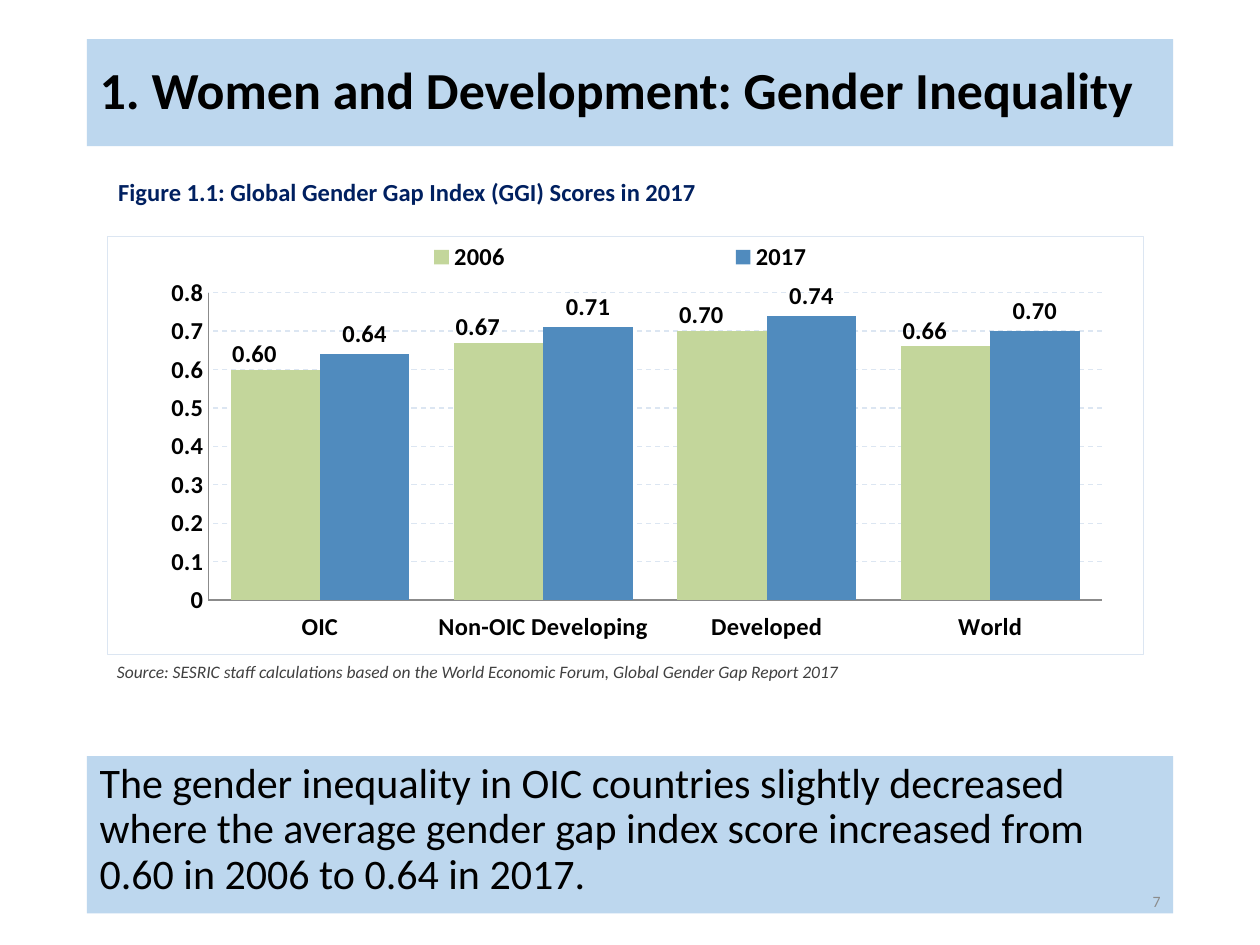
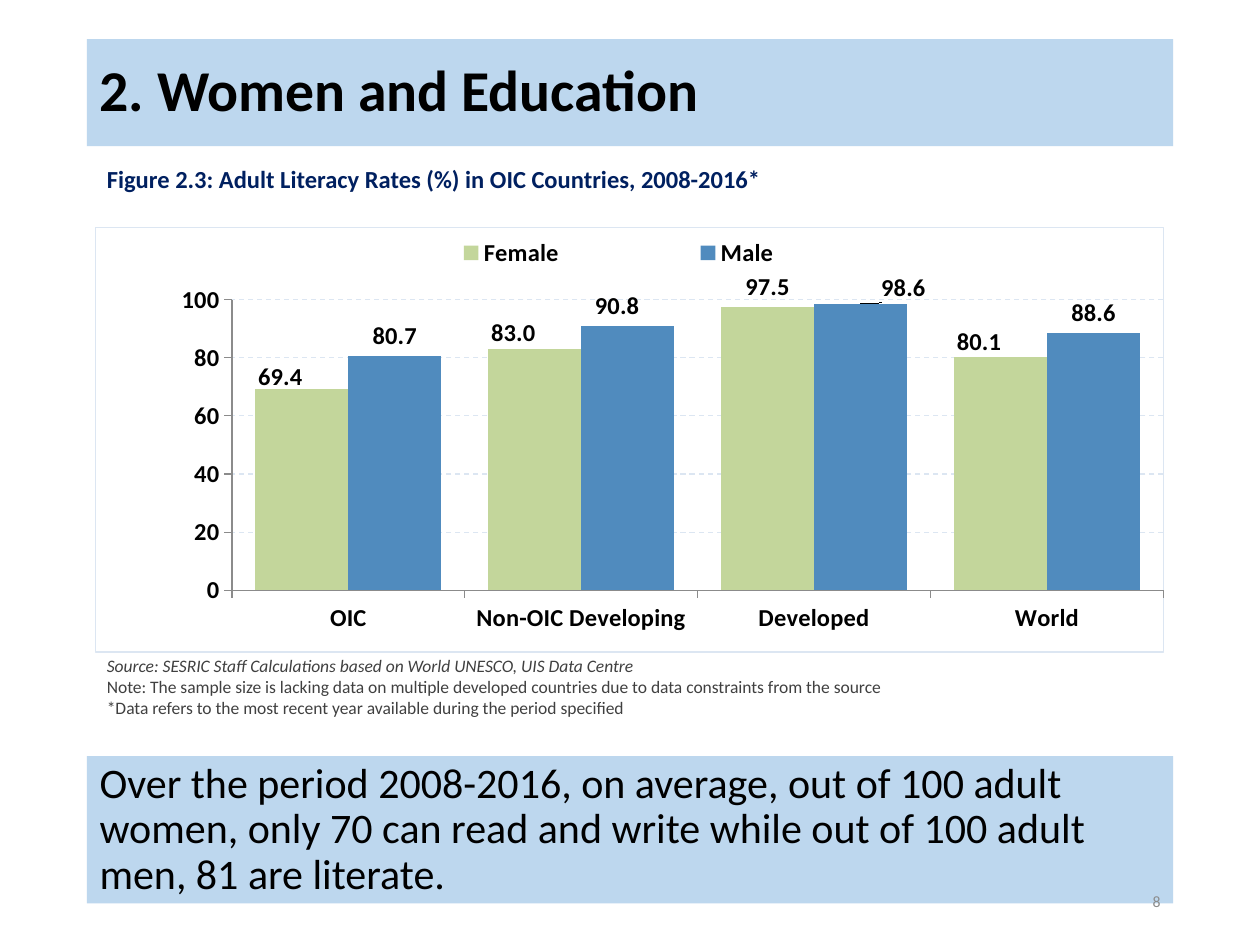
from dataclasses import dataclass

from lxml import etree
from pptx import Presentation
from pptx import util as u
from pptx.chart import data as chart_data
from pptx.dml import color
from pptx.enum import chart as ch
from pptx.enum import dml, text
from pptx.oxml import ns


@dataclass(frozen=True)
class Theme:
    font: str = "Calibri"
    band: str = "BDD7EE"
    ink: str = "000000"
    caption: str = "002060"
    source: str = "404040"
    number: str = "8C8C8C"
    axis: str = "8B8B8B"
    grid: str = "DCE6F2"
    bars: tuple = ("C3D69B", "508BBE")
    body_size: float = 24
    caption_size: float = 14
    chart_size: float = 14
    source_size: float = 10
    number_size: float = 9


REGIONS = ("OIC", "Non-OIC Developing", "Developed", "World")


def rgb(value):
    return color.RGBColor.from_string(value)


def place_by_hand(parent, index, **settings):
    for old in parent.findall(ns.qn("c:layout")):
        parent.remove(old)
    layout = etree.Element(ns.qn("c:layout"))
    manual = etree.SubElement(layout, ns.qn("c:manualLayout"))
    for tag, value in settings.items():
        etree.SubElement(manual, ns.qn(f"c:{tag}")).set("val", str(value))
    parent.insert(index, layout)


def place_box(parent, index, box, **target):
    x, y, w, h = box
    place_by_hand(parent, index, **target, xMode="edge", yMode="edge", x=x, y=y, w=w, h=h)


class Deck:
    def __init__(self, theme):
        self.theme = theme
        self.prs = Presentation()
        self.prs.slide_width = u.Inches(10)
        self.prs.slide_height = u.Inches(7.5)
        self.slide = None

    def add_slide(self):
        self.slide = self.prs.slides.add_slide(self.prs.slide_layouts[1])

    def style(self, paragraph, size, tint, bold=False, italic=False):
        for run in paragraph.runs:
            font = run.font
            font.name, font.size = self.theme.font, u.Pt(size)
            font.bold, font.italic = bold, italic
            font.color.rgb = rgb(tint)

    def band(self, holder, words, top, height, size, anchor, bold=False):
        holder.left, holder.top = u.Inches(0.69), u.Inches(top)
        holder.width, holder.height = u.Inches(8.62), u.Inches(height)
        holder.fill.solid()
        holder.fill.fore_color.rgb = rgb(self.theme.band)
        frame = holder.text_frame
        frame.text = words
        frame.word_wrap = True
        frame.auto_size = text.MSO_AUTO_SIZE.NONE
        frame.vertical_anchor = anchor
        line = frame.paragraphs[0]
        line.alignment = text.PP_ALIGN.LEFT
        line.line_spacing = 0.9
        self.style(line, size, self.theme.ink, bold)
        return line

    def title(self, words, size):
        self.band(self.slide.shapes.title, words, 0.31, 0.85, size,
                  text.MSO_ANCHOR.MIDDLE, bold=True)

    def finding(self, words, height):
        line = self.band(self.slide.placeholders[1], words, 6, height,
                         self.theme.body_size, text.MSO_ANCHOR.TOP)
        line.space_before = u.Pt(7.5)
        properties = line._p.get_or_add_pPr()
        properties.set("marL", "0")
        properties.set("indent", "0")
        etree.SubElement(properties, ns.qn("a:buNone"))

    def text(self, words, box, size, tint, bold=False):
        frame = self.slide.shapes.add_textbox(*map(u.Inches, box)).text_frame
        frame.word_wrap = True
        frame.text = words
        for line in frame.paragraphs:
            self.style(line, size, tint, bold)
        return frame

    def caption(self, words, box):
        self.text(words, box, self.theme.caption_size, self.theme.caption, bold=True)

    def sources(self, words, box):
        frame = self.text(words, box, self.theme.source_size, self.theme.source)
        frame.paragraphs[0].runs[0].font.italic = True

    def page_number(self, number):
        frame = self.text(str(number), (7.06, 6.95, 2.25, 0.4),
                          self.theme.number_size, self.theme.number)
        frame.vertical_anchor = text.MSO_ANCHOR.MIDDLE
        frame.paragraphs[0].alignment = text.PP_ALIGN.RIGHT

    def columns(self, box, scores, digits, top_value, step, ticks,
                plot_box, legend_box, label_shifts):
        table = chart_data.CategoryChartData(number_format=digits)
        table.categories = REGIONS
        for name, values in scores.items():
            table.add_series(name, values)
        chart = self.slide.shapes.add_chart(
            ch.XL_CHART_TYPE.COLUMN_CLUSTERED, *map(u.Inches, box), table).chart
        chart.has_title = False
        self.chart_font(chart.font)
        self.chart_frame(chart)
        self.legend(chart, legend_box)
        self.axes(chart, top_value, step, ticks)
        place_box(chart._chartSpace.chart.plotArea, 0, plot_box, layoutTarget="inner")
        plot = chart.plots[0]
        plot.gap_width, plot.overlap = 50, 0
        plot.vary_by_categories = False
        for series, tint, shifts in zip(plot.series, self.theme.bars, label_shifts):
            series.format.fill.solid()
            series.format.fill.fore_color.rgb = rgb(tint)
            self.value_labels(series, digits, shifts)

    def chart_font(self, font):
        font.name, font.size, font.bold = self.theme.font, u.Pt(self.theme.chart_size), True
        font.color.rgb = rgb(self.theme.ink)

    def chart_frame(self, chart):
        frame = etree.Element(ns.qn("c:spPr"))
        line = etree.Element(ns.qn("a:ln"), w=str(u.Pt(0.75)))
        for parent, tint in ((frame, "FFFFFF"), (line, self.theme.grid)):
            fill = etree.SubElement(parent, ns.qn("a:solidFill"))
            etree.SubElement(fill, ns.qn("a:srgbClr")).set("val", tint)
        frame.append(line)
        chart._chartSpace.chart.addnext(frame)

    def legend(self, chart, box):
        chart.has_legend = True
        chart.legend.position = ch.XL_LEGEND_POSITION.TOP
        chart.legend.include_in_layout = False
        self.chart_font(chart.legend.font)
        place_box(chart.legend._element, 1, box)

    def axes(self, chart, top_value, step, ticks):
        for axis in (chart.category_axis, chart.value_axis):
            axis.major_tick_mark = ticks
            axis.minor_tick_mark = ch.XL_TICK_MARK.NONE
            axis.format.line.color.rgb = rgb(self.theme.axis)
            axis.format.line.width = u.Pt(0.75)
            self.chart_font(axis.tick_labels.font)
        chart.category_axis.tick_label_position = ch.XL_TICK_LABEL_POSITION.LOW
        scale = chart.value_axis
        scale.minimum_scale, scale.maximum_scale, scale.major_unit = 0, top_value, step
        scale.tick_labels.number_format = "General"
        scale.tick_labels.number_format_is_linked = False
        grid = scale.major_gridlines.format.line
        grid.color.rgb = rgb(self.theme.grid)
        grid.width = u.Pt(0.75)
        grid.dash_style = dml.MSO_LINE.DASH

    def value_labels(self, series, digits, shifts):
        labels = series.data_labels
        labels.show_value = True
        labels.number_format = digits
        labels.number_format_is_linked = False
        labels.position = ch.XL_LABEL_POSITION.OUTSIDE_END
        self.chart_font(labels.font)
        for region, (x, y) in shifts.items():
            label = series.points[region].data_label
            label.position = ch.XL_LABEL_POSITION.OUTSIDE_END
            self.chart_font(label.font)
            moved = series._element.xpath(f"c:dLbls/c:dLbl[c:idx/@val='{region}']")[0]
            place_by_hand(moved, 1, x=x, y=y)


def gender_gap(deck):
    deck.add_slide()
    deck.title("1. Women and Development: Gender Inequality", 29.7)
    deck.finding("The gender inequality in OIC countries slightly decreased where the average "
                 "gender gap index score increased from 0.60 in 2006 to 0.64 in 2017.", 1.25)
    deck.columns((0.85, 1.87, 8.23, 3.33),
                 {"2006": (0.6, 0.67, 0.7, 0.66), "2017": (0.64, 0.71, 0.74, 0.7)},
                 "0.00", 0.8, 0.1, ch.XL_TICK_MARK.NONE,
                 plot_box=(0.097, 0.135, 0.863, 0.735), legend_box=(0.1, 0.01, 0.79, 0.08),
                 label_shifts=({region: (-0.02, 0.01) for region in range(4)}, {}))
    deck.caption("Figure 1.1: Global Gender Gap Index (GGI) Scores in 2017",
                 (0.84, 1.36, 8.24, 0.5))
    deck.sources("Source: SESRIC staff calculations based on the World Economic Forum, "
                 "Global Gender Gap Report 2017", (0.83, 5.2, 8.24, 0.36))
    deck.page_number(7)


def literacy(deck):
    deck.add_slide()
    deck.title("2. Women and Education", 33)
    deck.finding("Over the period 2008-2016, on average, out of 100 adult women, only 70 can "
                 "read and write while out of 100 adult men, 81 are literate.", 1.17)
    deck.columns((0.75, 1.8, 8.49, 3.38),
                 {"Female": (69.4, 83, 97.5, 80.1), "Male": (80.7, 90.8, 98.6, 88.6)},
                 "0.0", 100, 20, ch.XL_TICK_MARK.OUTSIDE,
                 plot_box=(0.128, 0.17, 0.872, 0.685), legend_box=(0.22, 0.02, 0.54, 0.08),
                 label_shifts=({0: (-0.02, 0.02), 1: (-0.02, 0.01), 3: (-0.02, 0.01)},
                               {1: (-0.01, 0), 2: (0.04, 0.01)}))
    deck.caption("Figure 2.3: Adult Literacy Rates (%) in OIC Countries, 2008-2016*",
                 (0.75, 1.25, 8.5, 0.56))
    deck.sources("Source: SESRIC Staff Calculations based on World UNESCO, UIS Data Centre\n"
                 "Note: The sample size is lacking data on multiple developed countries due to "
                 "data constraints from the source\n"
                 "*Data refers to the most recent year available during the period specified",
                 (0.75, 5.15, 8.5, 0.65))
    deck.page_number(8)


def main():
    deck = Deck(Theme())
    gender_gap(deck)
    literacy(deck)
    deck.prs.save("out.pptx")


if __name__ == "__main__":
    main()
